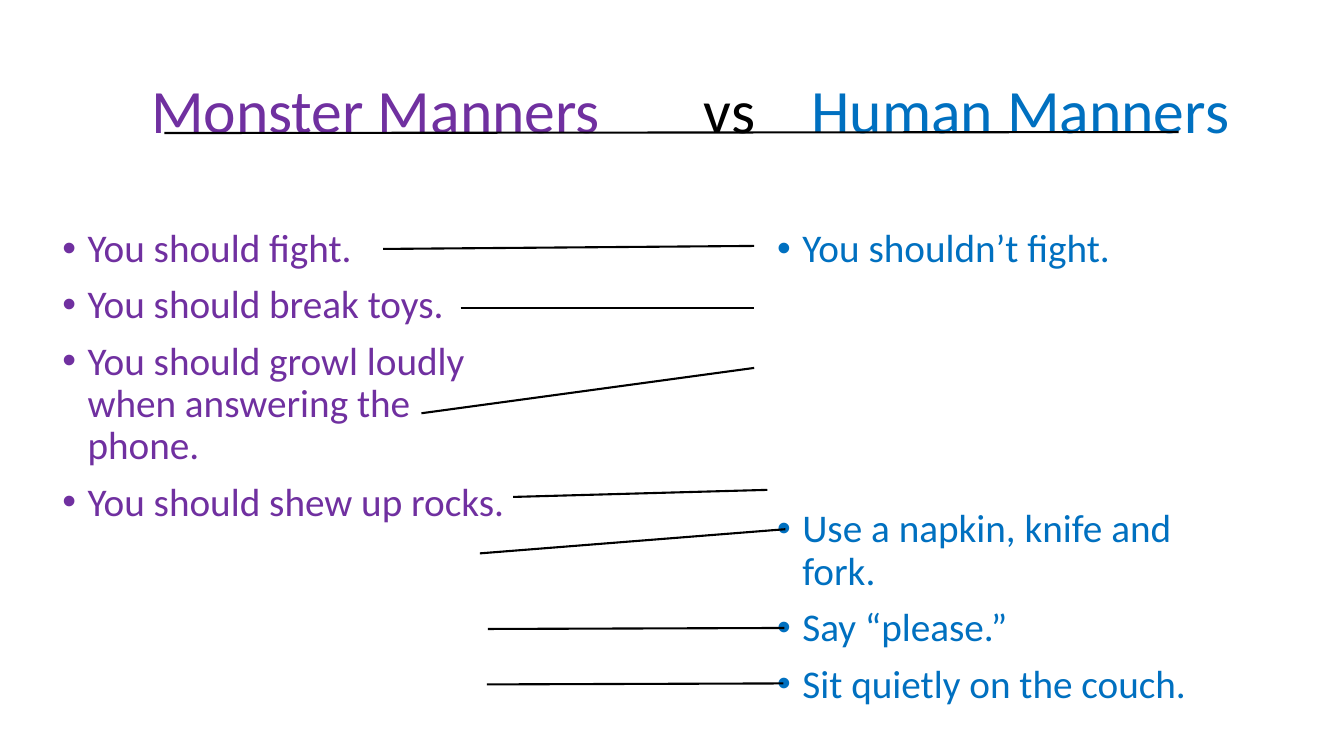
from typing import NamedTuple

from lxml import etree
from pptx import Presentation
from pptx.dml.color import RGBColor
from pptx.enum.shapes import MSO_CONNECTOR
from pptx.enum.text import MSO_ANCHOR
from pptx.oxml.ns import qn
from pptx.util import Inches, Pt

PURPLE = RGBColor(0x70, 0x30, 0xA0)
BLUE = RGBColor(0x00, 0x70, 0xC0)
BLACK = RGBColor(0x00, 0x00, 0x00)
STRAIGHT = MSO_CONNECTOR.STRAIGHT
MIDDLE = MSO_ANCHOR.MIDDLE
FONT = "Calibri"
LINE_SPACING = 0.9


class Rule(NamedTuple):
    x1: float
    y1: float
    x2: float
    y2: float


class Item(NamedTuple):
    text: str
    before: float = 10


class Column(NamedTuple):
    left: float
    height: float
    color: RGBColor
    items: list[Item]


TITLE_PARTS = [("Monster Manners", PURPLE), ("\tvs", BLACK), ("\tHuman Manners", BLUE)]
TITLE_INDENT = 0.48
TITLE_TABS = [5.48, 6.55]

COLUMNS = [
    Column(0.52, 4.76, PURPLE, [
        Item("You should fight."),
        Item("You should break toys."),
        Item("You should growl loudly when answering the phone."),
        Item("You should shew up rocks."),
    ]),
    Column(7.61, 5.28, BLUE, [
        Item("You shouldn’t fight."),
        Item("Use a napkin, knife and fork.", 170),
        Item("Say “please.”"),
        Item("Sit quietly on the couch."),
    ]),
]

RULES = [
    Rule(3.8, 2.47, 7.48, 2.44),
    Rule(4.57, 3.06, 7.48, 3.06),
    Rule(4.18, 4.1, 7.48, 3.65),
    Rule(5.09, 4.93, 7.61, 4.86),
    Rule(4.76, 5.49, 7.79, 5.25),
    Rule(4.84, 6.24, 7.78, 6.23),
    Rule(4.83, 6.79, 7.77, 6.78),
    Rule(1.63, 1.32, 11.69, 1.31),
]


def add_box(s, left: float, top: float, width: float, height: float):
    tf = s.shapes.add_textbox(Inches(left), Inches(top), Inches(width), Inches(height)).text_frame
    tf.word_wrap = True
    return tf


def add_run(p, text: str, size: float, color: RGBColor) -> None:
    r = p.add_run()
    r.text = text
    r.font.name = FONT
    r.font.size = Pt(size)
    r.font.color.rgb = color


def add_title(s) -> None:
    tf = add_box(s, 0.92, 0.4, 11.5, 1.45)
    tf.vertical_anchor = MIDDLE
    p = tf.paragraphs[0]
    p.line_spacing = LINE_SPACING
    pPr = p._p.get_or_add_pPr()
    pPr.set("marL", str(Inches(TITLE_INDENT)))
    tabs = etree.SubElement(pPr, qn("a:tabLst"))
    for pos in TITLE_TABS:
        etree.SubElement(tabs, qn("a:tab"), pos=str(Inches(pos)), algn="l")
    for text, color in TITLE_PARTS:
        add_run(p, text, 44, color)


def add_column(s, column: Column) -> None:
    tf = add_box(s, column.left, 2.22, 4.7, column.height)
    for i, item in enumerate(column.items):
        p = tf.add_paragraph() if i else tf.paragraphs[0]
        p.line_spacing = LINE_SPACING
        p.space_before = Pt(item.before)
        pPr = p._p.get_or_add_pPr()
        pPr.set("marL", str(Inches(0.25)))
        pPr.set("indent", str(Inches(-0.25)))
        etree.SubElement(pPr, qn("a:buFont"), typeface="Arial")
        etree.SubElement(pPr, qn("a:buChar"), char="•")
        add_run(p, item.text, 28, column.color)


def add_rule(s, rule: Rule) -> None:
    sp = s.shapes.add_connector(STRAIGHT, *(Inches(v) for v in rule))
    sp.line.color.rgb = BLACK
    sp.line.width = Pt(1.5)
    etree.SubElement(sp._element.spPr, qn("a:effectLst"))


def main() -> None:
    prs = Presentation()
    prs.slide_width = Inches(13.33)
    prs.slide_height = Inches(7.5)
    s = prs.slides.add_slide(prs.slide_layouts[6])
    add_title(s)
    for column in COLUMNS:
        add_column(s, column)
    for rule in RULES:
        add_rule(s, rule)
    prs.save("out.pptx")


if __name__ == "__main__":
    main()
